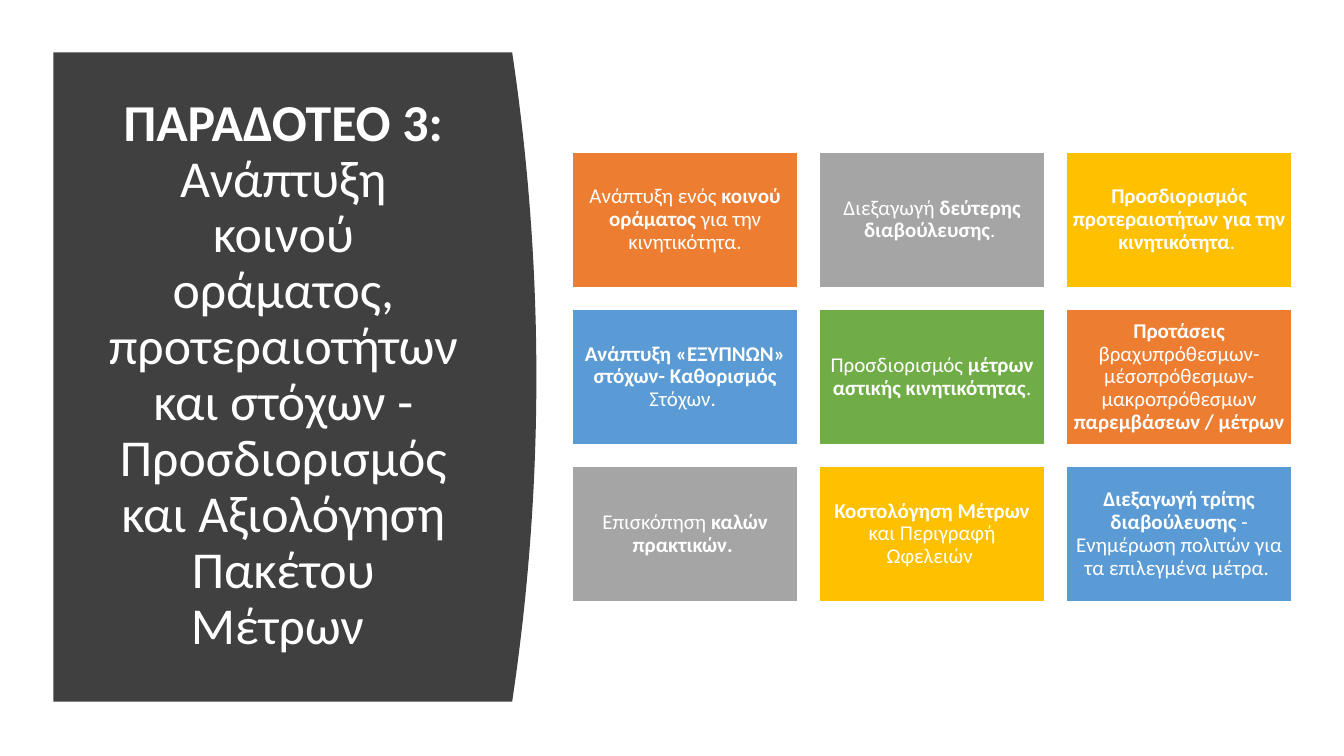
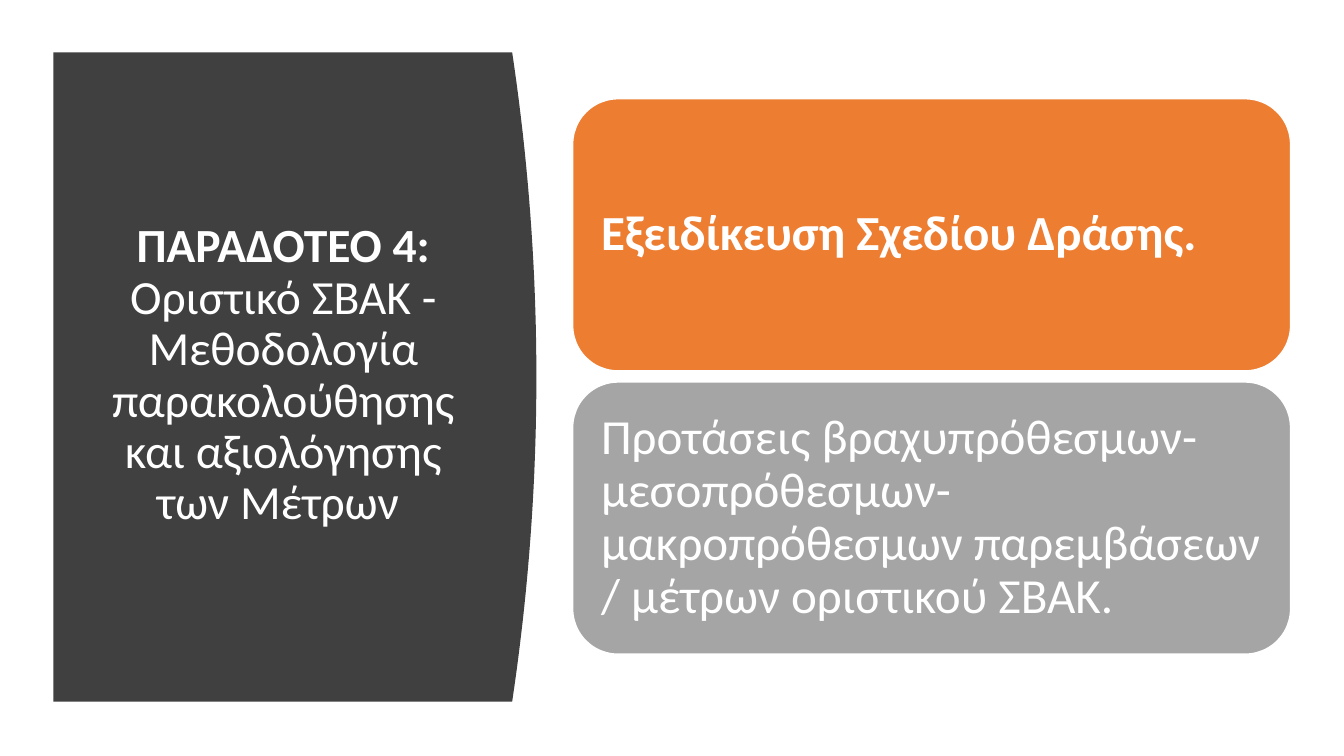
from dataclasses import dataclass

from pptx import Presentation
from pptx.dml.color import RGBColor
from pptx.enum.shapes import MSO_SHAPE
from pptx.enum.text import MSO_ANCHOR, MSO_AUTO_SIZE, PP_ALIGN
from pptx.util import Inches, Pt

RECT, ROUNDED = MSO_SHAPE.RECTANGLE, MSO_SHAPE.ROUNDED_RECTANGLE
LEFT, CENTER = PP_ALIGN.LEFT, PP_ALIGN.CENTER
MIDDLE = MSO_ANCHOR.MIDDLE
NO_AUTOFIT = MSO_AUTO_SIZE.NONE
TITLE_ONLY = 5


@dataclass(frozen=True)
class Theme:
    font: str = "Calibri"
    white: str = "FFFFFF"
    panel: str = "404040"
    orange: str = "ED7D31"
    gray: str = "A5A5A5"
    gold: str = "FFC000"
    blue: str = "5B9BD5"
    green: str = "70AD47"
    card_size: int = 15
    box_size: int = 35
    line_spacing: float = 0.9
    outline: int = 1


T = Theme()
BOLD, PLAIN = True, False

# Each text is a list of (words, bold) runs; each block adds its fill.
SLIDES = [
    {
        "title": [
            ("ΠΑΡΑΔΟΤΕΟ 3: ", BOLD),
            ("Ανάπτυξη κοινού οράματος, προτεραιοτήτων και στόχων - "
             "Προσδιορισμός και Αξιολόγηση Πακέτου Μέτρων ", PLAIN),
        ],
        "title_size": 37,
        "blocks": [
            (T.orange, [("Ανάπτυξη ενός ", PLAIN), ("κοινού οράματος ", BOLD),
                        ("για την κινητικότητα.", PLAIN)]),
            (T.gray, [("Διεξαγωγή ", PLAIN), ("δεύτερης διαβούλευσης", BOLD),
                      (". ", PLAIN)]),
            (T.gold, [("Προσδιορισμός προτεραιοτήτων για την κινητικότητα", BOLD),
                      (". ", PLAIN)]),
            (T.blue, [("Ανάπτυξη «ΕΞΥΠΝΩΝ» στόχων- Καθορισμός ", BOLD),
                      ("Στόχων. ", PLAIN)]),
            (T.green, [("Προσδιορισμός ", PLAIN),
                       ("μέτρων αστικής κινητικότητας", BOLD), (".", PLAIN)]),
            (T.orange, [("Προτάσεις", BOLD),
                        (" βραχυπρόθεσμων- μέσοπρόθεσμων- μακροπρόθεσμων ", PLAIN),
                        ("παρεμβάσεων / μέτρων ", BOLD)]),
            (T.gray, [("Επισκόπηση ", PLAIN), ("καλών πρακτικών. ", BOLD)]),
            (T.gold, [("Κοστολόγηση Μέτρων ", BOLD),
                      ("και Περιγραφή Ωφελειών ", PLAIN)]),
            (T.blue, [("Διεξαγωγή τρίτης διαβούλευσης ", BOLD),
                      ("- Ενημέρωση πολιτών για τα επιλεγμένα μέτρα. ", PLAIN)]),
        ],
        "grid": {"kind": RECT, "columns": 3, "top": 1.51, "width": 2.23,
                 "height": 1.34, "gap_x": 0.22, "gap_y": 0.22},
        "text": {"size": T.card_size, "align": CENTER, "inset": 0.06},
    },
    {
        "title": [
            ("ΠΑΡΑΔΟΤΕΟ 4: ", BOLD),
            ("Οριστικό ΣΒΑΚ - Μεθοδολογία παρακολούθησης και αξιολόγησης "
             "των Μέτρων ", PLAIN),
        ],
        "title_size": 34,
        "blocks": [
            (T.orange, [("Εξειδίκευση Σχεδίου Δράσης.", BOLD)]),
            (T.gray, [("Προτάσεις βραχυπρόθεσμων- μεσοπρόθεσμων- μακροπρόθεσμων "
                       "παρεμβάσεων / μέτρων οριστικού ΣΒΑΚ.", PLAIN)]),
        ],
        "grid": {"kind": ROUNDED, "columns": 1, "top": 0.98, "width": 7.12,
                 "height": 2.7, "gap_x": 0, "gap_y": 0.11},
        "text": {"size": T.box_size, "align": LEFT, "inset": 0.15},
    },
]

CONTENT_LEFT = 5.68
TITLE_BOX = (0.94, 1.11, 3.74, 5.24)
PANEL_LEFT, PANEL_TOP, PANEL_RIGHT, PANEL_BOTTOM = 0.53, 0.52, 5.08, 6.96
PANEL_BULGE, PANEL_STEPS = 0.24, 40


def rgb(color):
    return RGBColor.from_string(color)


def set_text(shape, runs, *, size, align, inset=None, color=T.white):
    tf = shape.text_frame
    tf.word_wrap = True
    tf.auto_size = NO_AUTOFIT
    tf.vertical_anchor = MIDDLE
    if inset is not None:
        tf.margin_left = tf.margin_right = Inches(inset)
        tf.margin_top = tf.margin_bottom = Inches(inset)
    p = tf.paragraphs[0]
    p.alignment = align
    p.line_spacing = T.line_spacing
    for words, bold in runs:
        r = p.add_run()
        r.text = words
        r.font.name = T.font
        r.font.size = Pt(size)
        r.font.bold = bold
        r.font.color.rgb = rgb(color)


def paint(shape, fill, line=None):
    shape.shadow.inherit = False
    shape.fill.solid()
    shape.fill.fore_color.rgb = rgb(fill)
    if line:
        shape.line.color.rgb = rgb(line)
        shape.line.width = Pt(T.outline)
    else:
        shape.line.fill.background()


def add_panel(s):
    """Draw the dark panel, its right edge a parabola, behind the title."""
    half = (PANEL_BOTTOM - PANEL_TOP) / 2
    edge = []
    for i in range(PANEL_STEPS + 1):
        t = 2 * i / PANEL_STEPS - 1
        edge.append((Inches(PANEL_RIGHT + PANEL_BULGE * (1 - t * t)),
                     Inches(PANEL_TOP + half * (1 + t))))
    builder = s.shapes.build_freeform(Inches(PANEL_LEFT), Inches(PANEL_TOP))
    builder.add_line_segments(
        edge + [(Inches(PANEL_LEFT), Inches(PANEL_BOTTOM))], close=True)
    panel = builder.convert_to_shape()
    paint(panel, T.panel)
    s.shapes.title._element.addprevious(panel._element)


def add_blocks(s, blocks, text, *, kind, columns, top, width, height, gap_x, gap_y):
    for i, (fill, runs) in enumerate(blocks):
        row, column = divmod(i, columns)
        block = s.shapes.add_shape(
            kind,
            Inches(CONTENT_LEFT + column * (width + gap_x)),
            Inches(top + row * (height + gap_y)),
            Inches(width), Inches(height))
        paint(block, fill, T.white)
        set_text(block, runs, **text)


def main():
    prs = Presentation()
    prs.slide_width, prs.slide_height = Inches(13.33), Inches(7.5)
    layout = prs.slide_layouts[TITLE_ONLY]
    for content in SLIDES:
        s = prs.slides.add_slide(layout)
        title = s.shapes.title
        title.left, title.top, title.width, title.height = map(Inches, TITLE_BOX)
        set_text(title, content["title"], size=content["title_size"], align=CENTER)
        add_panel(s)
        add_blocks(s, content["blocks"], content["text"], **content["grid"])
    prs.save("out.pptx")


if __name__ == "__main__":
    main()
